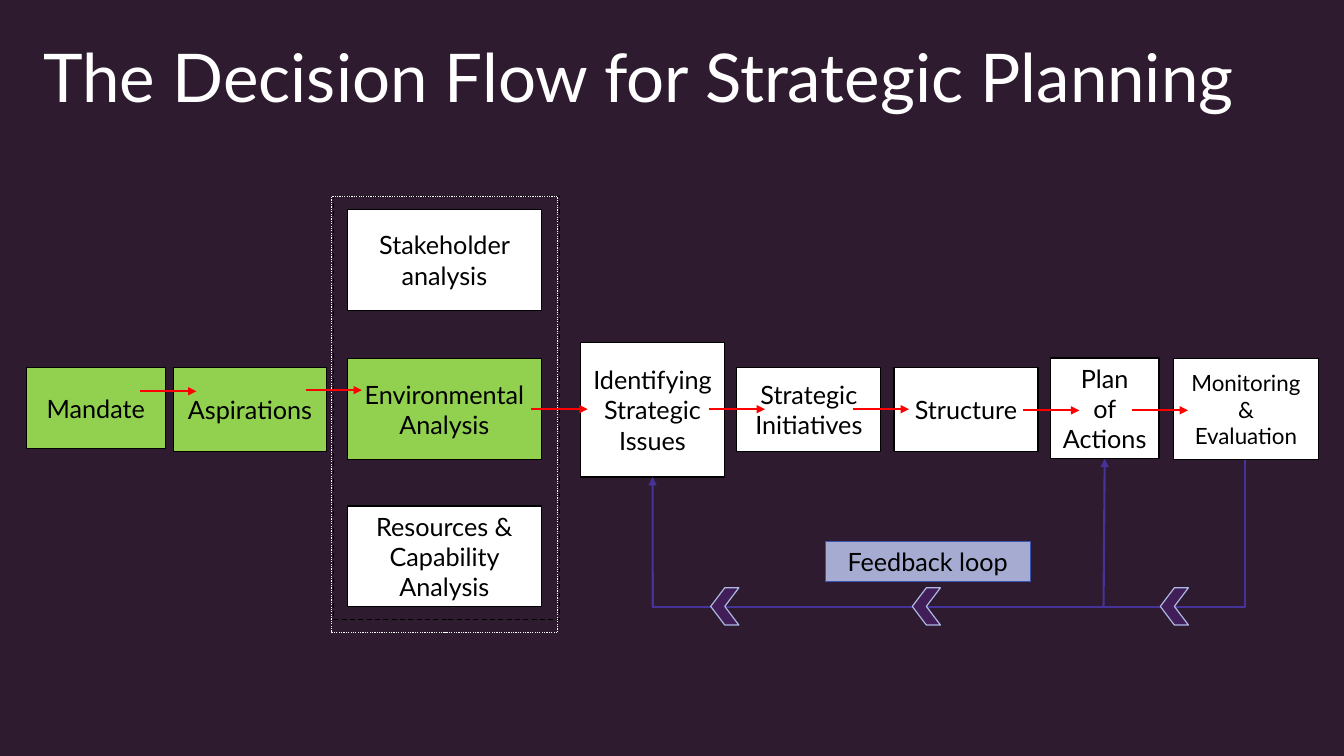
from lxml import etree
from pptx import Presentation
from pptx.dml.color import RGBColor
from pptx.enum.dml import MSO_LINE as Dash
from pptx.enum.shapes import MSO_CONNECTOR as Link, MSO_SHAPE as Preset
from pptx.enum.text import MSO_ANCHOR as Anchor, PP_ALIGN as Align
from pptx.oxml.ns import qn
from pptx.util import Cm, Pt

BACKDROP = RGBColor(0x2F, 0x1B, 0x2F)
WHITE = RGBColor(0xFF, 0xFF, 0xFF)
BLACK = RGBColor(0x00, 0x00, 0x00)
GREEN = RGBColor(0x92, 0xD0, 0x50)
RED = RGBColor(0xFF, 0x00, 0x00)
VIOLET = RGBColor(0x46, 0x33, 0x99)
LAVENDER = RGBColor(0xA6, 0xAC, 0xD1)
BLUE = RGBColor(0x3B, 0x56, 0xB1)
PURPLE = RGBColor(0x41, 0x1E, 0x58)
PALE_BLUE = RGBColor(0xAD, 0xB9, 0xE4)

deck = Presentation()
deck.slide_width, deck.slide_height = Cm(33.87), Cm(19.05)
slide = deck.slides.add_slide(deck.slide_layouts[5])
slide.background.fill.solid()
slide.background.fill.fore_color.rgb = BACKDROP

heading = slide.shapes.title
heading_place = {"left": 0.84, "top": 0.76, "width": 32.39, "height": 2.31}
for side, length in heading_place.items():
    setattr(heading, side, Cm(length))
heading.text_frame.text = "The Decision Flow for Strategic Planning"
heading.text_frame.vertical_anchor = Anchor.MIDDLE
heading.text_frame.paragraphs[0].alignment = Align.LEFT
heading_font = heading.text_frame.paragraphs[0].font
for key, value in {"name": "Lato", "size": Pt(48)}.items():
    setattr(heading_font, key, value)
heading_font.color.rgb = WHITE


def draw(preset, place, fill, outline, text="", size=18, weight=0.85):
    shape = slide.shapes.add_shape(preset, *(Cm(length) for length in place))
    shape.shadow.inherit = False
    if fill is None:
        shape.fill.background()
    else:
        shape.fill.solid()
        shape.fill.fore_color.rgb = fill
    shape.line.color.rgb = outline
    shape.line.width = Pt(weight)
    if text:
        shape.text_frame.text = text
        shape.text_frame.word_wrap = True
        shape.text_frame.vertical_anchor = Anchor.MIDDLE
        for paragraph in shape.text_frame.paragraphs:
            paragraph.alignment = Align.CENTER
            for key, value in {"name": "Lato", "size": Pt(size)}.items():
                setattr(paragraph.font, key, value)
            paragraph.font.color.rgb = BLACK
    return shape


def connect(kind, start, end, color, weight, arrow=True):
    link = slide.shapes.add_connector(kind, *(Cm(length) for length in start + end))
    link.line.color.rgb = color
    link.line.width = Pt(weight)
    if arrow:
        etree.SubElement(link.line._get_or_add_ln(), qn("a:tailEnd"), type="triangle")
    etree.SubElement(link._element.spPr, qn("a:effectLst"))
    return link


stages = {}
for text, place, fill, size in [
    ("Mandate", (0.66, 9.27, 3.51, 2.03), GREEN, 18),
    ("Aspirations", (4.37, 9.27, 3.86, 2.11), GREEN, 18),
    ("Stakeholder analysis", (8.76, 5.28, 4.88, 2.54), WHITE, 18),
    ("Environmental Analysis", (8.76, 9.04, 4.88, 2.54), GREEN, 18),
    ("Resources &\nCapability Analysis", (8.76, 12.75, 4.88, 2.54), WHITE, 18),
    ("Identifying Strategic Issues", (14.63, 8.64, 3.63, 3.38), WHITE, 18),
    ("Strategic Initiatives", (18.57, 9.27, 3.63, 2.11), WHITE, 18),
    ("Structure", (22.53, 9.27, 3.63, 2.11), WHITE, 18),
    ("Plan\nof\nActions", (26.47, 9.02, 2.74, 2.54), WHITE, 18),
    ("Monitoring\n&\nEvaluation", (29.57, 9.04, 3.66, 2.54), WHITE, 16),
]:
    stages[text] = draw(Preset.RECTANGLE, place, fill, BLACK, text, size)

for place, outline, dash in [
    ((8.41, 4.95, 5.69, 10.67), BLACK, Dash.DASH),
    ((8.36, 4.95, 5.69, 11), WHITE, Dash.ROUND_DOT),
]:
    analysis_frame = draw(Preset.RECTANGLE, place, None, outline)
    analysis_frame.line.dash_style = dash

feedback_path = connect(Link.ELBOW, (22.05, 5.97), (25.76, 20.91), VIOLET, 1.75, False)
feedback_path._element.spPr.find(qn("a:prstGeom")).set("prst", "bentConnector2")
feedback_path._element.spPr.find(qn("a:xfrm")).set("rot", "5400000")

for stage, left, bottom in [
    ("Identifying Strategic Issues", 16.45, 12.02),
    ("Plan\nof\nActions", 27.81, 11.56),
]:
    return_arrow = connect(Link.STRAIGHT, (left, 15.29), (left, bottom), VIOLET, 1.5)
    return_arrow.end_connect(stages[stage], 2)

draw(Preset.RECTANGLE, (20.8, 13.64, 5.16, 1.02), LAVENDER, BLUE, "Feedback loop", weight=0.75)

for left in (29.24, 22.99, 17.91):
    chevron = draw(Preset.CHEVRON, (left, 14.81, 0.71, 0.94), PURPLE, PALE_BLUE)
    chevron.rotation = 180

for left, top in [
    (3.53, 9.86), (7.7, 9.83), (13.39, 10.31), (17.86, 10.31),
    (21.49, 10.31), (25.78, 10.34), (28.52, 10.34),
]:
    connect(Link.STRAIGHT, (left, top), (left + 1.42, top), RED, 1.5)

deck.save("out.pptx")
